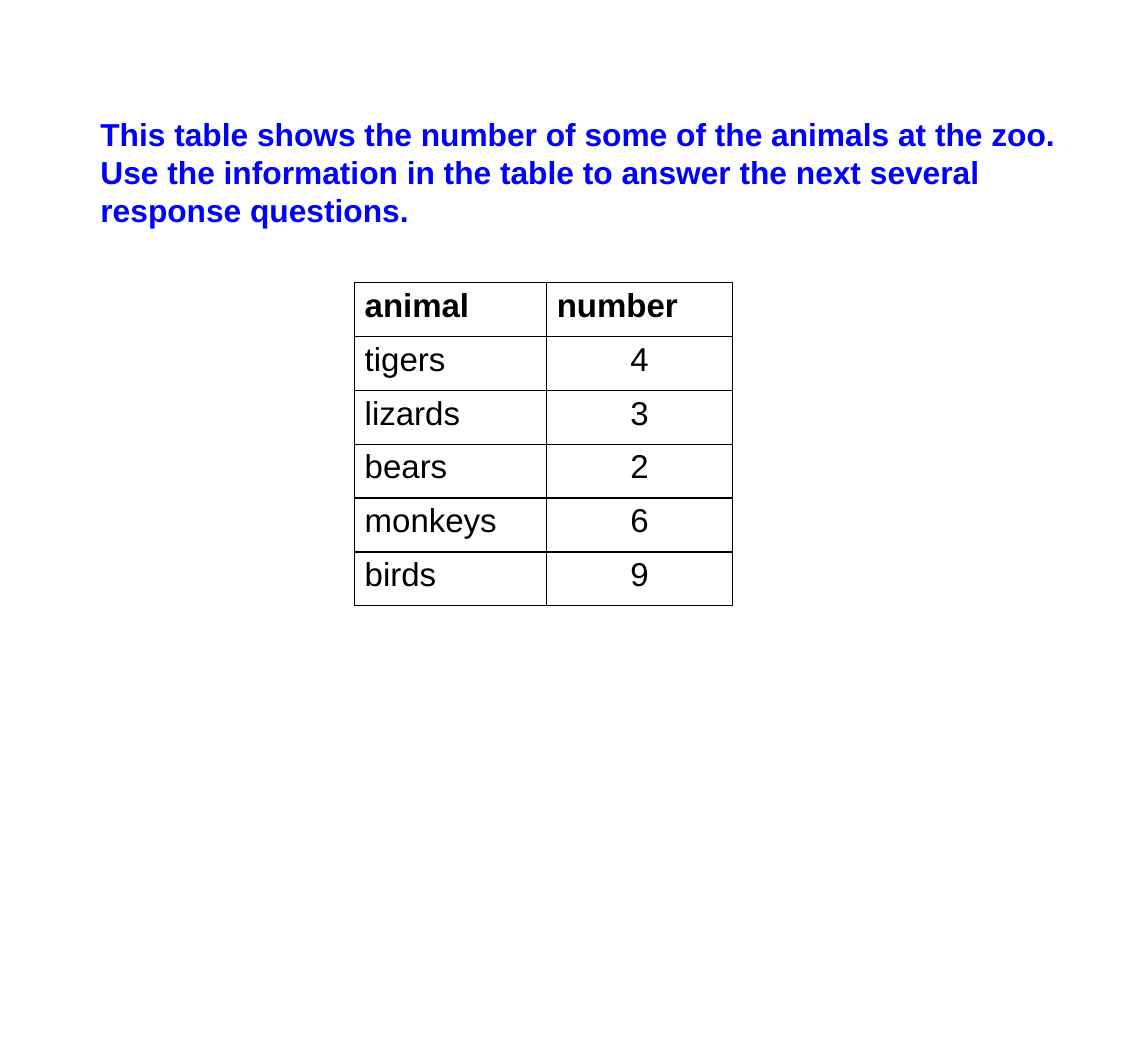
import pptx
import pptx.util
import pptx.dml.color
import pptx.enum.text
import pptx.oxml
import pptx.oxml.ns

Pt = pptx.util.Pt
ALIGN = pptx.enum.text.PP_ALIGN
ROWS = [
    ("animal", "number"),
    ("tigers", "4"),
    ("lizards", "3"),
    ("bears", "2"),
    ("monkeys", "6"),
    ("birds", "9"),
]
PROMPT = (
    "This table shows the number of some of the animals at the zoo. "
    "Use the information in the table to answer the next several response questions."
)


def color(code):
    """Turn a hex string into a colour."""
    return pptx.dml.color.RGBColor.from_string(code)


def write(frame, text, size=25, ink="000000", bold=False, align=ALIGN.LEFT):
    """Put formatted text into a text frame."""
    frame.word_wrap = True
    para = frame.paragraphs[0]
    para.alignment = align
    run = para.add_run()
    run.text = text
    run.font.name = "Arial"
    run.font.size = Pt(size)
    run.font.bold = bold
    run.font.color.rgb = color(ink)


def pad(item):
    """Set the inner margins of a cell or text frame."""
    item.margin_left = item.margin_right = Pt(7.6)
    item.margin_top = item.margin_bottom = Pt(3.8)


def edge(cell, ink="000000", width=1):
    """Draw a line on all four sides of a cell."""
    props = cell._tc.get_or_add_tcPr()
    space = pptx.oxml.ns.nsdecls("a")
    for spot, side in enumerate(("lnL", "lnR", "lnT", "lnB")):
        line = pptx.oxml.parse_xml(
            f'<a:{side} {space} w="{Pt(width)}"><a:solidFill>'
            f'<a:srgbClr val="{ink}"/></a:solidFill></a:{side}>'
        )
        props.insert(spot, line)


def add_prompt(slide, left, top, width, height):
    """Place the blue prompt in its box."""
    box = slide.shapes.add_textbox(Pt(left), Pt(top), Pt(width), Pt(height))
    pad(box.text_frame)
    write(box.text_frame, PROMPT, size=24, ink="0000FF", bold=True)


def add_count(slide, left, top, width, height):
    """Place the table of animal counts in its box."""
    frame = slide.shapes.add_table(
        len(ROWS), 2, Pt(left), Pt(top), Pt(width), Pt(height)
    )
    table = frame.table
    first = 145.4
    table.columns[0].width = Pt(first)
    table.columns[1].width = Pt(width - first)
    for r, row in enumerate(ROWS):
        table.rows[r].height = Pt(height / len(ROWS))
        for c, text in enumerate(row):
            cell = table.cell(r, c)
            pad(cell)
            cell.fill.solid()
            cell.fill.fore_color.rgb = color("FFFFFF")
            edge(cell)
            align = ALIGN.CENTER if r and c else ALIGN.LEFT
            write(cell.text_frame, text, bold=r == 0, align=align)


def main():
    """Build the slide and save it."""
    deck = pptx.Presentation()
    deck.slide_width = Pt(869)
    deck.slide_height = Pt(800)
    slide = deck.slides.add_slide(deck.slide_layouts[6])
    add_prompt(slide, 68.4, 82.8, 745.2, 95)
    add_count(slide, 268.5, 213.8, 286, 244.8)
    deck.save("out.pptx")


if __name__ == "__main__":
    main()
